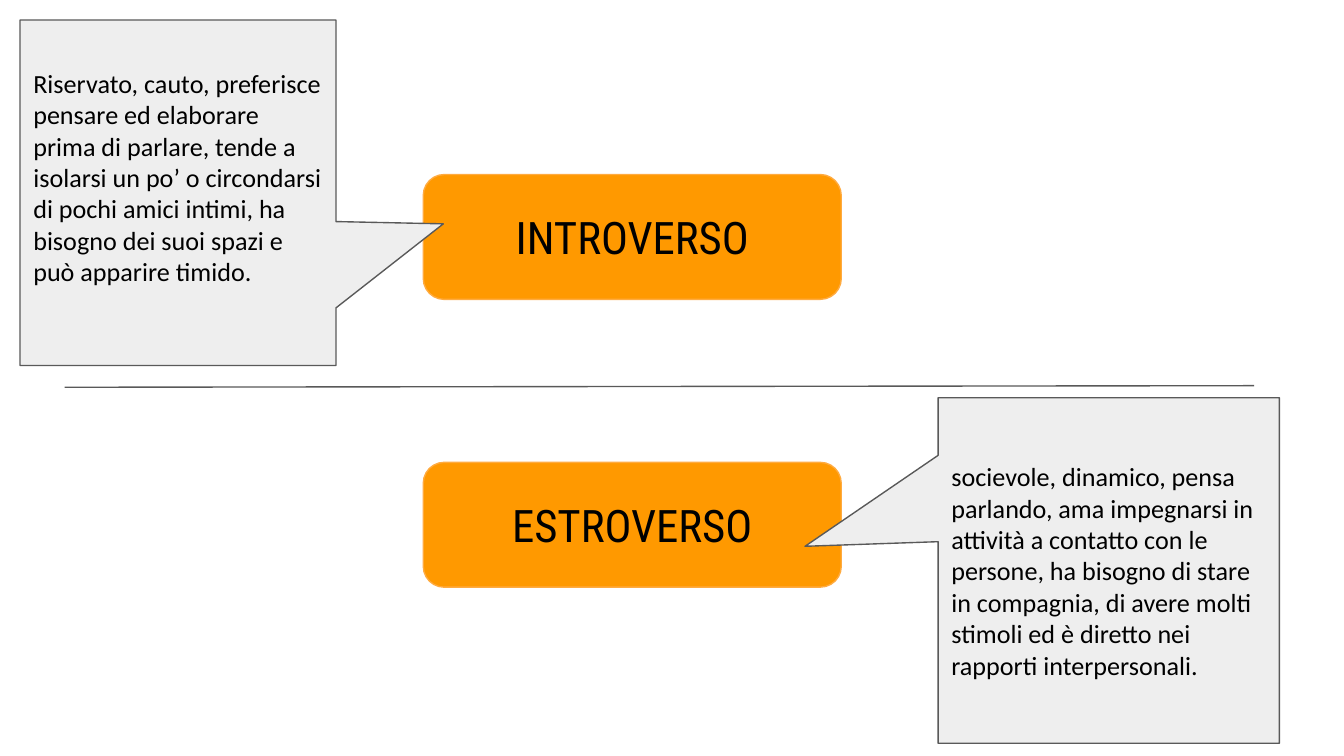
from lxml import etree
from pptx import Presentation
from pptx.dml.color import RGBColor
from pptx.enum.shapes import MSO_CONNECTOR as Connector, MSO_SHAPE as Shape
from pptx.enum.text import MSO_ANCHOR as Anchor, PP_ALIGN as Align
from pptx.oxml.ns import qn
from pptx.util import Cm, Pt

BLACK = RGBColor(0x00, 0x00, 0x00)
ORANGE = RGBColor(0xFF, 0x99, 0x00)
LIGHT_ORANGE = RGBColor(0xFF, 0xAB, 0x40)
LIGHT_GREY = RGBColor(0xEE, 0xEE, 0xEE)
DARK_GREY = RGBColor(0x59, 0x59, 0x59)


class PersonalitySlide:
    label_font, label_size = "Roboto Condensed", Pt(24)
    trait_font, trait_size = "Calibri", Pt(14)
    line_width = Pt(0.75)
    inset = Cm(0.25)

    def __init__(self, presentation):
        self.slide = presentation.slides.add_slide(presentation.slide_layouts[6])

    def divider(self, x1, y1, x2, y2):
        divider = self.slide.shapes.add_connector(
            Connector.STRAIGHT, Cm(x1), Cm(y1), Cm(x2), Cm(y2))
        divider.line.color.rgb = DARK_GREY
        divider.line.width = self.line_width
        etree.SubElement(divider.element.spPr, qn("a:effectLst"))

    def _box(self, kind, bounds, adjustments, fill, outline, text, align, font, size):
        box = self.slide.shapes.add_shape(kind, *map(Cm, bounds))
        box.shadow.inherit = False
        for index, value in enumerate(adjustments):
            box.adjustments[index] = value
        box.fill.solid()
        box.fill.fore_color.rgb = fill
        box.line.color.rgb = outline
        box.line.width = self.line_width
        frame = box.text_frame
        frame.word_wrap = True
        frame.vertical_anchor = Anchor.MIDDLE
        frame.margin_left = frame.margin_right = self.inset
        frame.margin_top = frame.margin_bottom = self.inset
        paragraph = frame.paragraphs[0]
        paragraph.text = text
        paragraph.alignment = align
        paragraph.font.name = font
        paragraph.font.size = size
        paragraph.font.color.rgb = BLACK
        return box

    def label(self, top, text):
        self._box(Shape.ROUNDED_RECTANGLE, (8, top, 7.9, 2.36), (0.167,),
                  ORANGE, LIGHT_ORANGE, text, Align.CENTER,
                  self.label_font, self.label_size)

    def callout(self, left, top, width, pointer, text, bottom_inset=inset):
        traits = self._box(Shape.ROUNDED_RECTANGULAR_CALLOUT, (left, top, width, 6.53),
                           (*pointer, 0), LIGHT_GREY, DARK_GREY, text, Align.LEFT,
                           self.trait_font, self.trait_size)
        traits.text_frame.margin_bottom = bottom_inset


def main():
    presentation = Presentation()
    presentation.slide_width = Cm(25.4)
    presentation.slide_height = Cm(14.29)

    personality = PersonalitySlide(presentation)
    personality.divider(1.22, 7.32, 23.7, 7.29)
    personality.label(3.3, "INTROVERSO")
    personality.label(8.74, "ESTROVERSO")
    personality.callout(
        0.38, 0.38, 5.97, (0.84, 0.09),
        "Riservato, cauto, preferisce pensare ed elaborare prima di parlare, "
        "tende a isolarsi un po’ o circondarsi di pochi amici intimi, "
        "ha bisogno dei suoi spazi e può apparire timido.",
        bottom_inset=Cm(0.85))
    personality.callout(
        17.73, 7.52, 6.45, (-0.89, -0.07),
        "socievole, dinamico, pensa parlando, ama impegnarsi in attività "
        "a contatto con le persone, ha bisogno di stare in compagnia, "
        "di avere molti stimoli ed è diretto nei rapporti interpersonali.")

    presentation.save("out.pptx")


if __name__ == "__main__":
    main()
